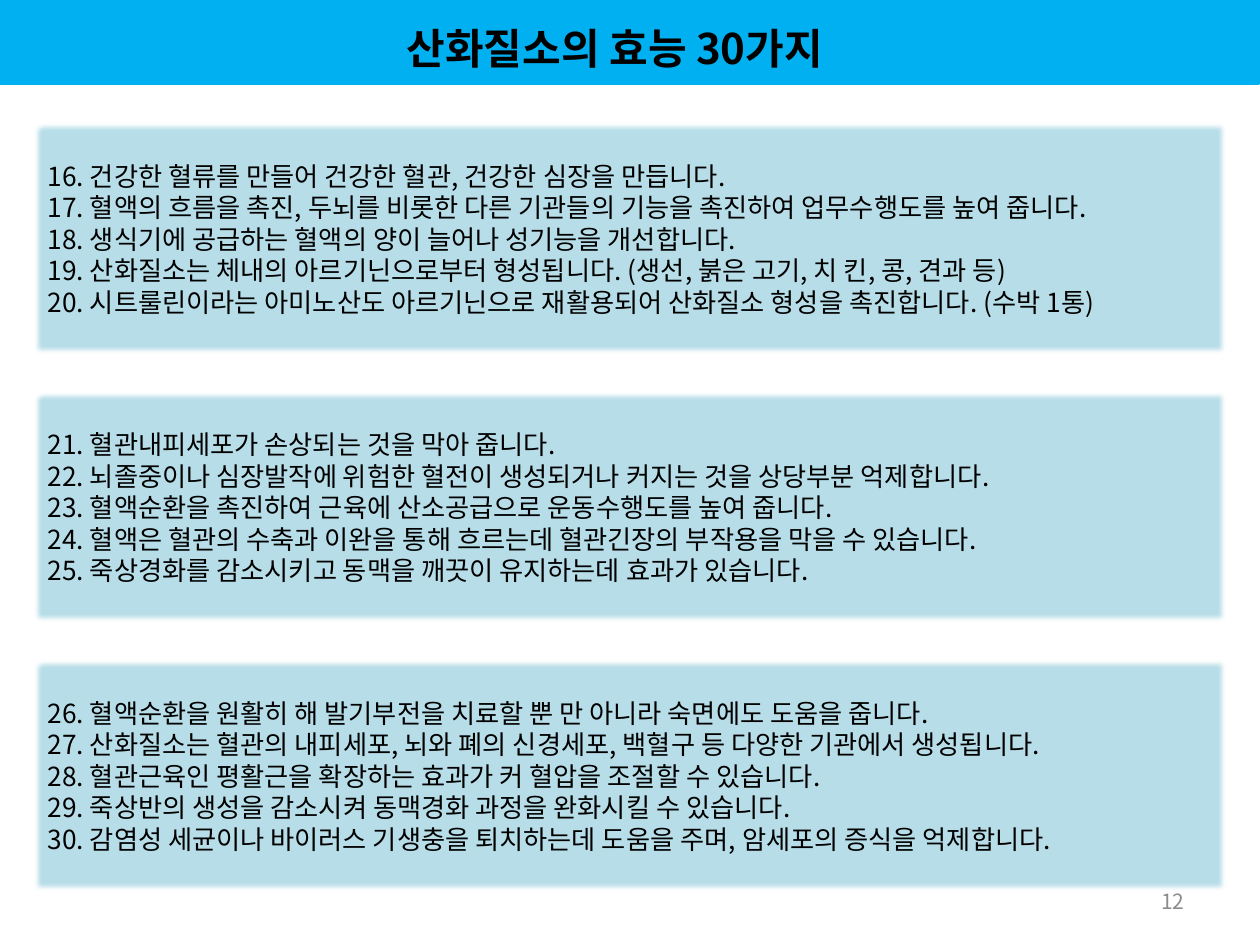
from dataclasses import dataclass

import lxml.etree
import pptx
import pptx.dml.color
import pptx.enum.shapes
import pptx.enum.text
import pptx.oxml.ns
import pptx.util

WIDTH, HEIGHT = 10, 7.5
FONT = "Noto Sans CJK KR"
PANEL_LEFT, PANEL_TOP, PANEL_STEP = 0.28, 0.99, 2.13
PANEL_WIDTH, PANEL_HEIGHT = WIDTH - 2 * PANEL_LEFT, 1.81
FIRST_NUMBER = 16
SHAPE = pptx.enum.shapes.MSO_SHAPE
ALIGN = pptx.enum.text.PP_ALIGN

PANELS = [
    [
        "건강한 혈류를 만들어 건강한 혈관, 건강한 심장을 만듭니다.",
        "혈액의 흐름을 촉진, 두뇌를 비롯한 다른 기관들의 기능을 촉진하여 업무수행도를 높여 줍니다.",
        "생식기에 공급하는 혈액의 양이 늘어나 성기능을 개선합니다.",
        "산화질소는 체내의 아르기닌으로부터 형성됩니다. (생선, 붉은 고기, 치 킨, 콩, 견과 등)",
        "시트룰린이라는 아미노산도 아르기닌으로 재활용되어 산화질소 형성을 촉진합니다. (수박 1통)",
    ],
    [
        "혈관내피세포가 손상되는 것을 막아 줍니다.",
        "뇌졸중이나 심장발작에 위험한 혈전이 생성되거나 커지는 것을 상당부분 억제합니다.",
        "혈액순환을 촉진하여 근육에 산소공급으로 운동수행도를 높여 줍니다.",
        "혈액은 혈관의 수축과 이완을 통해 흐르는데 혈관긴장의 부작용을 막을 수 있습니다.",
        "죽상경화를 감소시키고 동맥을 깨끗이 유지하는데 효과가 있습니다.",
    ],
    [
        "혈액순환을 원활히 해 발기부전을 치료할 뿐 만 아니라 숙면에도 도움을 줍니다.",
        "산화질소는 혈관의 내피세포, 뇌와 폐의 신경세포, 백혈구 등 다양한 기관에서 생성됩니다.",
        "혈관근육인 평활근을 확장하는 효과가 커 혈압을 조절할 수 있습니다.",
        "죽상반의 생성을 감소시켜 동맥경화 과정을 완화시킬 수 있습니다.",
        "감염성 세균이나 바이러스 기생충을 퇴치하는데 도움을 주며, 암세포의 증식을 억제합니다.",
    ],
]


@dataclass
class Box:
    left: float
    top: float
    width: float
    height: float

    def emu(self) -> list[int]:
        return [pptx.util.Inches(v) for v in (self.left, self.top, self.width, self.height)]


@dataclass
class TextStyle:
    size: float
    color: str = "000000"
    bold: bool = False
    align: ALIGN = ALIGN.LEFT
    line_points: float | None = None


def rgb(color: str) -> pptx.dml.color.RGBColor:
    return pptx.dml.color.RGBColor.from_string(color)


def add_block(slide, kind: SHAPE, box: Box, color: str | None = None):
    sp = slide.shapes.add_shape(kind, *box.emu())
    sp.shadow.inherit = False
    if color is None:
        sp.fill.background()
        sp.line.fill.background()
    else:
        sp.fill.solid()
        sp.fill.fore_color.rgb = rgb(color)
        sp.line.color.rgb = rgb(color)
        sp.line.width = pptx.util.Pt(2)
    return sp


def soften_edges(sp, points: float) -> None:
    effects = sp._element.spPr.find(pptx.oxml.ns.qn("a:effectLst"))
    edge = lxml.etree.SubElement(effects, pptx.oxml.ns.qn("a:softEdge"))
    edge.set("rad", str(int(pptx.util.Pt(points))))


def write(sp, lines: list[str], style: TextStyle) -> None:
    tf = sp.text_frame
    tf.word_wrap = True
    tf.vertical_anchor = pptx.enum.text.MSO_ANCHOR.MIDDLE
    tf.text = "\n".join(lines)
    for p in tf.paragraphs:
        p.alignment = style.align
        if style.line_points:
            p.line_spacing = pptx.util.Pt(style.line_points)
        for r in p.runs:
            r.font.name = FONT
            r.font.size = pptx.util.Pt(style.size)
            r.font.bold = style.bold
            r.font.color.rgb = rgb(style.color)
            east_asian = lxml.etree.SubElement(r.font._element, pptx.oxml.ns.qn("a:ea"))
            east_asian.set("typeface", FONT)


def main() -> None:
    prs = pptx.Presentation()
    prs.slide_width = pptx.util.Inches(WIDTH)
    prs.slide_height = pptx.util.Inches(HEIGHT)
    slide = prs.slides.add_slide(prs.slide_layouts[6])

    add_block(slide, SHAPE.RECTANGLE, Box(-0.01, 0, WIDTH, 0.66), "00B0F0")
    title = add_block(slide, SHAPE.ROUNDED_RECTANGLE, Box(1.95, 0.1, 5.86, 0.55))
    write(title, ["산화질소의 효능 30가지"], TextStyle(24, bold=True, align=ALIGN.CENTER))

    number = FIRST_NUMBER
    for row, benefits in enumerate(PANELS):
        box = Box(PANEL_LEFT, PANEL_TOP + row * PANEL_STEP, PANEL_WIDTH, PANEL_HEIGHT)
        panel = add_block(slide, SHAPE.RECTANGLE, box, "B7DEE8")
        soften_edges(panel, 2.5)
        lines = [f"{n}. {text}" for n, text in enumerate(benefits, number)]
        write(panel, lines, TextStyle(15, line_points=18))
        number += len(benefits)

    page_number = slide.shapes.add_textbox(*Box(7.17, 6.95, 2.33, 0.4).emu())
    write(page_number, ["12"], TextStyle(12, "8C8C8C", align=ALIGN.RIGHT))

    prs.save("out.pptx")


if __name__ == "__main__":
    main()
